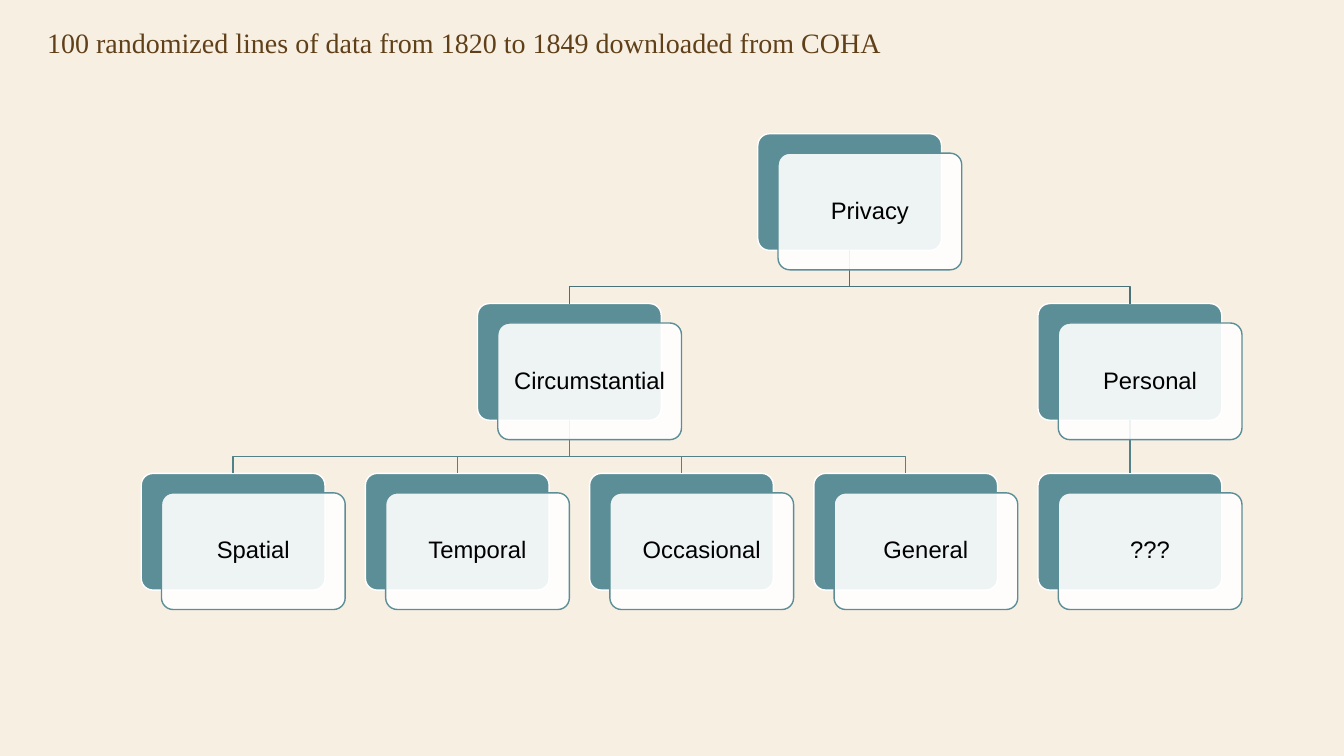
from lxml import etree
from pptx import Presentation
from pptx.dml.color import RGBColor
from pptx.enum.shapes import MSO_CONNECTOR, MSO_SHAPE
from pptx.enum.text import MSO_ANCHOR, MSO_AUTO_SIZE, PP_ALIGN
from pptx.oxml.ns import qn
from pptx.util import Cm, Pt

ROUNDED = MSO_SHAPE.ROUNDED_RECTANGLE
STRAIGHT = MSO_CONNECTOR.STRAIGHT
MIDDLE = MSO_ANCHOR.MIDDLE
CENTER = PP_ALIGN.CENTER
FIT_SHAPE = MSO_AUTO_SIZE.SHAPE_TO_FIT_TEXT
BOTTOM_SIDE, TOP_SIDE = 2, 0

CREAM = RGBColor(0xF8, 0xEF, 0xE3)
BROWN = RGBColor(0x5F, 0x40, 0x18)
TEAL = RGBColor(0x5B, 0x8E, 0x96)
UPPER_LINK = RGBColor(0x49, 0x72, 0x78)
LOWER_LINK = RGBColor(0x53, 0x81, 0x88)
WHITE = RGBColor(0xFF, 0xFF, 0xFF)
BLACK = RGBColor(0x00, 0x00, 0x00)

# Tree grid: first box, distance between columns and levels, box size
TREE_LEFT, TREE_TOP = Cm(3.56), Cm(3.37)
COLUMN_STEP, LEVEL_STEP = Cm(5.65), Cm(4.28)
BOX_WIDTH, BOX_HEIGHT = Cm(4.63), Cm(2.94)
CARD_SHIFT_X, CARD_SHIFT_Y = Cm(0.51), Cm(0.49)
ELBOW_DROP = Cm(0.91)

# Label: (column, level, parent)
NODES = {
    "Privacy": (2.75, 0, None),
    "Circumstantial": (1.5, 1, "Privacy"),
    "Personal": (4, 1, "Privacy"),
    "Spatial": (0, 2, "Circumstantial"),
    "Temporal": (1, 2, "Circumstantial"),
    "Occasional": (2, 2, "Circumstantial"),
    "General": (3, 2, "Circumstantial"),
    "???": (4, 2, "Personal"),
}


def format_text(para, font_name, size, color):
    for span in para.runs:
        span.font.name = font_name
        span.font.size = Pt(size)
        span.font.color.rgb = color


def add_title(page, text):
    box = page.shapes.add_textbox(Cm(0.76), Cm(0.51), Cm(23.6), Cm(1.11))
    frame = box.text_frame
    frame.word_wrap = True
    frame.auto_size = FIT_SHAPE
    frame.text = text
    format_text(frame.paragraphs[0], "Times New Roman", 20, BROWN)


def add_rounded_box(page, left, top, fill, line):
    box = page.shapes.add_shape(ROUNDED, left, top, BOX_WIDTH, BOX_HEIGHT)
    box.adjustments[0] = 0.1
    box.shadow.inherit = False
    box.fill.solid()
    box.fill.fore_color.rgb = fill
    box.line.color.rgb = line
    box.line.width = Pt(1)
    return box


def add_back_box(page, column, level):
    left = TREE_LEFT + int(column * COLUMN_STEP)
    top = TREE_TOP + level * LEVEL_STEP
    return add_rounded_box(page, left, top, TEAL, WHITE)


def add_label_card(page, back, label):
    card = add_rounded_box(page, back.left + CARD_SHIFT_X,
                           back.top + CARD_SHIFT_Y, WHITE, TEAL)
    # Let the back box show through at 90 % opacity
    fill_color = card.element.spPr.find(qn("a:solidFill")).find(qn("a:srgbClr"))
    etree.SubElement(fill_color, qn("a:alpha"), val="90000")

    frame = card.text_frame
    frame.word_wrap = True
    frame.vertical_anchor = MIDDLE
    frame.margin_left = frame.margin_right = Cm(0.25)
    frame.margin_top = frame.margin_bottom = Cm(0.25)
    frame.text = label
    para = frame.paragraphs[0]
    para.alignment = CENTER
    para.line_spacing = 0.9
    para.space_after = Pt(6)
    format_text(para, "Arial", 17, BLACK)


def add_straight_link(page, parent, child):
    link = page.shapes.add_connector(STRAIGHT, 0, 0, 0, 0)
    link.begin_connect(parent, BOTTOM_SIDE)
    link.end_connect(child, TOP_SIDE)
    etree.SubElement(link.element.spPr, qn("a:effectLst"))
    return link


def add_elbow_link(page, parent, child):
    start_x = parent.left + BOX_WIDTH // 2
    start_y = parent.top + BOX_HEIGHT
    end_x = child.left + BOX_WIDTH // 2
    elbow_y = start_y + ELBOW_DROP
    outline = page.shapes.build_freeform(start_x, start_y)
    outline.add_line_segments(
        [(start_x, elbow_y), (end_x, elbow_y), (end_x, child.top)], close=False)
    link = outline.convert_to_shape()
    link.fill.background()
    link.shadow.inherit = False
    return link


def add_link(page, parent, child, color):
    add = add_straight_link if parent.left == child.left else add_elbow_link
    link = add(page, parent, child)
    link.line.color.rgb = color
    link.line.width = Pt(1)


def main():
    deck = Presentation()
    deck.slide_width, deck.slide_height = Cm(33.87), Cm(19.05)
    page = deck.slides.add_slide(deck.slide_layouts[6])
    page.background.fill.solid()
    page.background.fill.fore_color.rgb = CREAM

    add_title(page, " 100 randomized lines of data from 1820 to 1849 downloaded from COHA")

    # Back boxes, then links, then the translucent cards over both
    backs = {label: add_back_box(page, column, level)
             for label, (column, level, _) in NODES.items()}
    for label, (_, level, parent) in NODES.items():
        if parent:
            color = UPPER_LINK if level == 1 else LOWER_LINK
            add_link(page, backs[parent], backs[label], color)
    for label, back in backs.items():
        add_label_card(page, back, label)

    deck.save("out.pptx")


if __name__ == "__main__":
    main()
